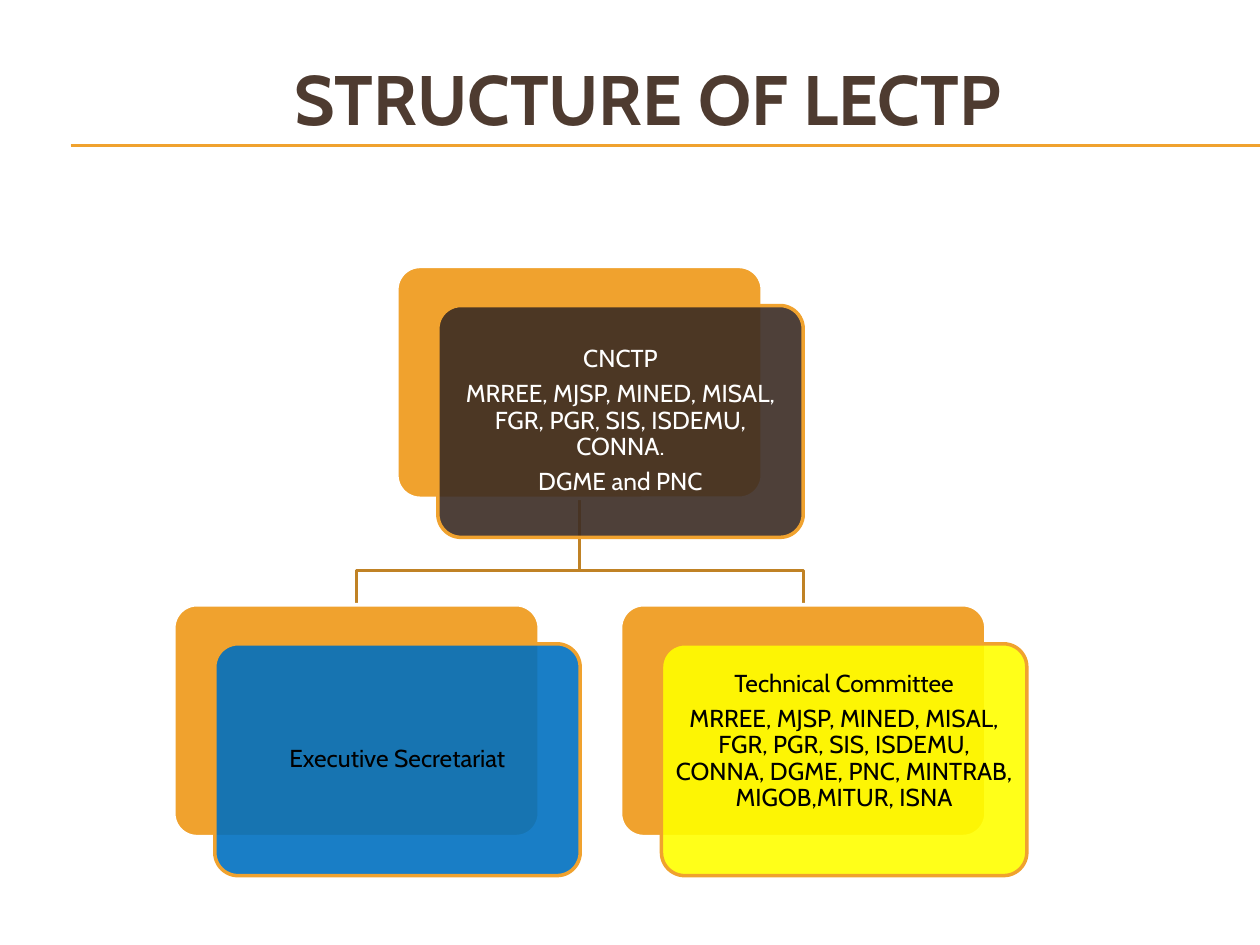
import pptx
import pptx.dml.color
import pptx.enum.shapes
import pptx.enum.text
import pptx.oxml.ns
import pptx.util
from lxml import etree

COLUMNS, ROWS = 100, 75
CARD_WIDTH, CARD_HEIGHT = 29, 18.4
FRONT_SHIFT = (3.25, 3.1)
GOLD, DARK_GOLD, BROWN = "F0A22E", "C08225", "4E3B30"


def color(hex_code):
    return pptx.dml.color.RGBColor.from_string(hex_code)


class ChartSlide:
    """Draws on one slide; lengths are columns and rows of the grid."""

    font = "Cabin"

    def __init__(self, deck):
        self.slide = deck.slides.add_slide(deck.slide_layouts[6])
        self.column = deck.slide_width / COLUMNS
        self.row = deck.slide_height / ROWS

    def point(self, x, y):
        return round(x * self.column), round(y * self.row)

    def outline(self, shape, hex_code, points):
        shape.line.color.rgb = color(hex_code)
        shape.line.width = pptx.util.Pt(points)

    def label(self, frame, lines, size, hex_code, bold=False):
        frame.word_wrap = True
        frame.vertical_anchor = pptx.enum.text.MSO_ANCHOR.MIDDLE
        for index, line in enumerate(lines):
            paragraph = frame.add_paragraph() if index else frame.paragraphs[0]
            paragraph.text = line
            paragraph.alignment = pptx.enum.text.PP_ALIGN.CENTER
            paragraph.font.name = self.font
            paragraph.font.size = pptx.util.Pt(size)
            paragraph.font.bold = bold
            paragraph.font.color.rgb = color(hex_code)

    def title(self, text, x, y, width, height):
        box = self.slide.shapes.add_textbox(*self.point(x, y), *self.point(width, height))
        self.label(box.text_frame, [text], 40, BROWN, bold=True)

    def rule(self, x1, x2, y):
        line = self.slide.shapes.add_connector(
            pptx.enum.shapes.MSO_CONNECTOR.STRAIGHT, *self.point(x1, y), *self.point(x2, y))
        self.outline(line, GOLD, 0.75)
        etree.SubElement(line.element.spPr, pptx.oxml.ns.qn("a:effectLst"))

    def branch(self, start, bend, end):
        corners = [(start[0], bend), (end[0], bend), end]
        builder = self.slide.shapes.build_freeform(*self.point(*start))
        builder.add_line_segments([self.point(*corner) for corner in corners], close=False)
        elbow = builder.convert_to_shape()
        elbow.shadow.inherit = False
        elbow.fill.background()
        self.outline(elbow, DARK_GOLD, 2)

    def card(self, x, y, fill, border, opacity=100):
        card = self.slide.shapes.add_shape(
            pptx.enum.shapes.MSO_SHAPE.ROUNDED_RECTANGLE,
            *self.point(x, y), *self.point(CARD_WIDTH, CARD_HEIGHT))
        card.adjustments[0] = 0.1
        card.shadow.inherit = False
        card.fill.solid()
        card.fill.fore_color.rgb = color(fill)
        if opacity < 100:
            solid = card.element.spPr.find(pptx.oxml.ns.qn("a:solidFill"))
            alpha = etree.SubElement(solid[0], pptx.oxml.ns.qn("a:alpha"))
            alpha.set("val", str(opacity * 1000))
        self.outline(card, border, 2)
        return card

    def node(self, x, y, lines, fill, ink, lift=0):
        """Gold back card with a translucent, labelled card in front."""
        self.card(x, y, GOLD, "FFFFFF")
        front = self.card(x + FRONT_SHIFT[0], y + FRONT_SHIFT[1], fill, GOLD, opacity=90)
        frame = front.text_frame
        frame.margin_left = frame.margin_right = round(0.6 * self.column)
        frame.margin_top = round(0.6 * self.row)
        frame.margin_bottom = round((0.6 + lift) * self.row)
        self.label(frame, lines, 14, ink)
        for paragraph in frame.paragraphs:
            paragraph.line_spacing = 0.9
            paragraph.space_after = pptx.util.Pt(4.9)


def main():
    deck = pptx.Presentation()
    deck.slide_width = pptx.util.Inches(10)
    deck.slide_height = pptx.util.Inches(7.5)
    chart = ChartSlide(deck)

    # Heading with its double rule
    for y in (11.5, 11.6):
        chart.rule(5.6, COLUMNS, y)
    chart.title("STRUCTURE OF LECTP", 3.9, 3.1, 95, 9.2)

    # Branches from the council down to its two bodies
    council = (31.5, 21.15)
    body_top = 48
    secretariat_left, committee_left = 13.8, 49.25
    trunk = (council[0] + CARD_WIDTH / 2, council[1] + CARD_HEIGHT)
    for left in (committee_left, secretariat_left):
        chart.branch(trunk, 45.3, (left + CARD_WIDTH / 2, body_top))

    # Council and bodies
    chart.node(*council, [
        "CNCTP",
        "MRREE, MJSP, MINED, MISAL, FGR, PGR, SIS, ISDEMU, CONNA.",
        "DGME and PNC",
    ], "3B2C24", "FFFFFF")
    chart.node(secretariat_left, body_top, ["Executive Secretariat"], "0070C0", "000000")
    chart.node(committee_left, body_top, [
        "Technical Committee",
        "MRREE, MJSP, MINED, MISAL, FGR, PGR, SIS, ISDEMU, CONNA, DGME, PNC, "
        "MINTRAB, MIGOB,MITUR, ISNA",
    ], "FFFF00", "000000", lift=2.9)

    deck.save("out.pptx")


if __name__ == "__main__":
    main()
